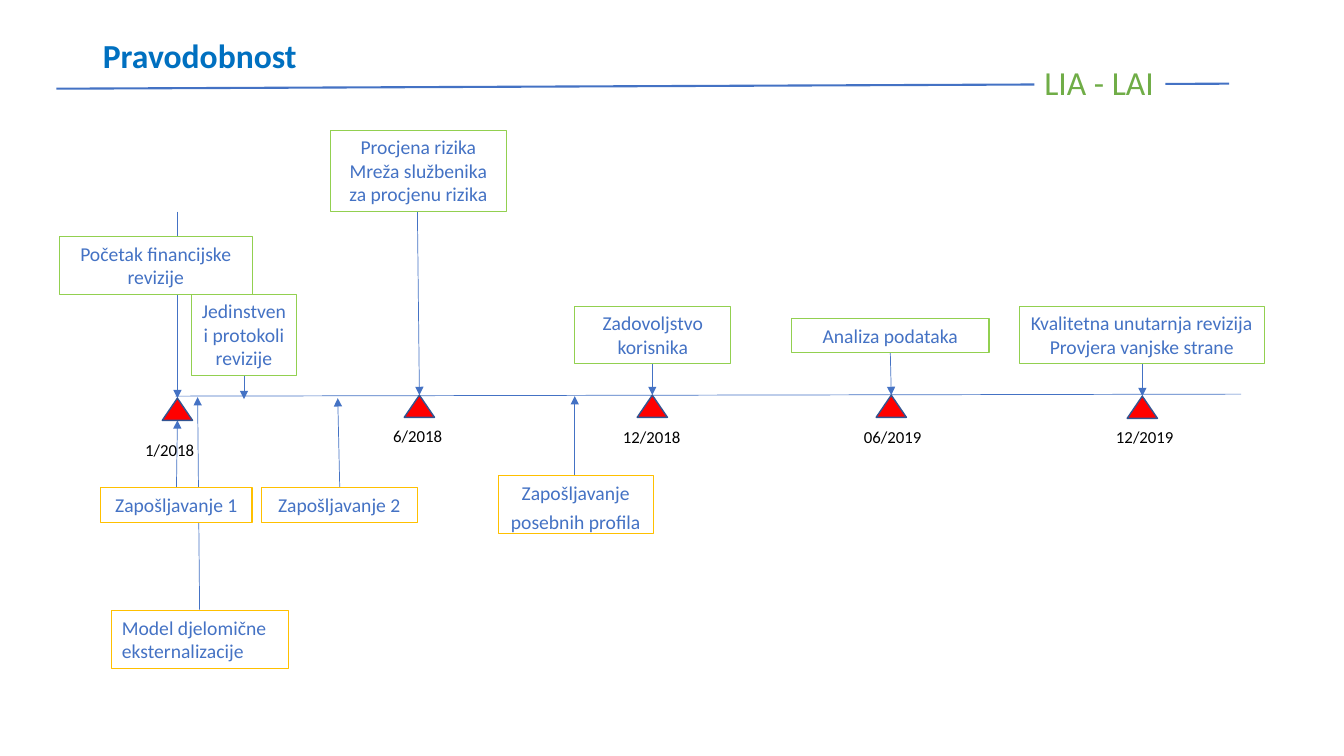
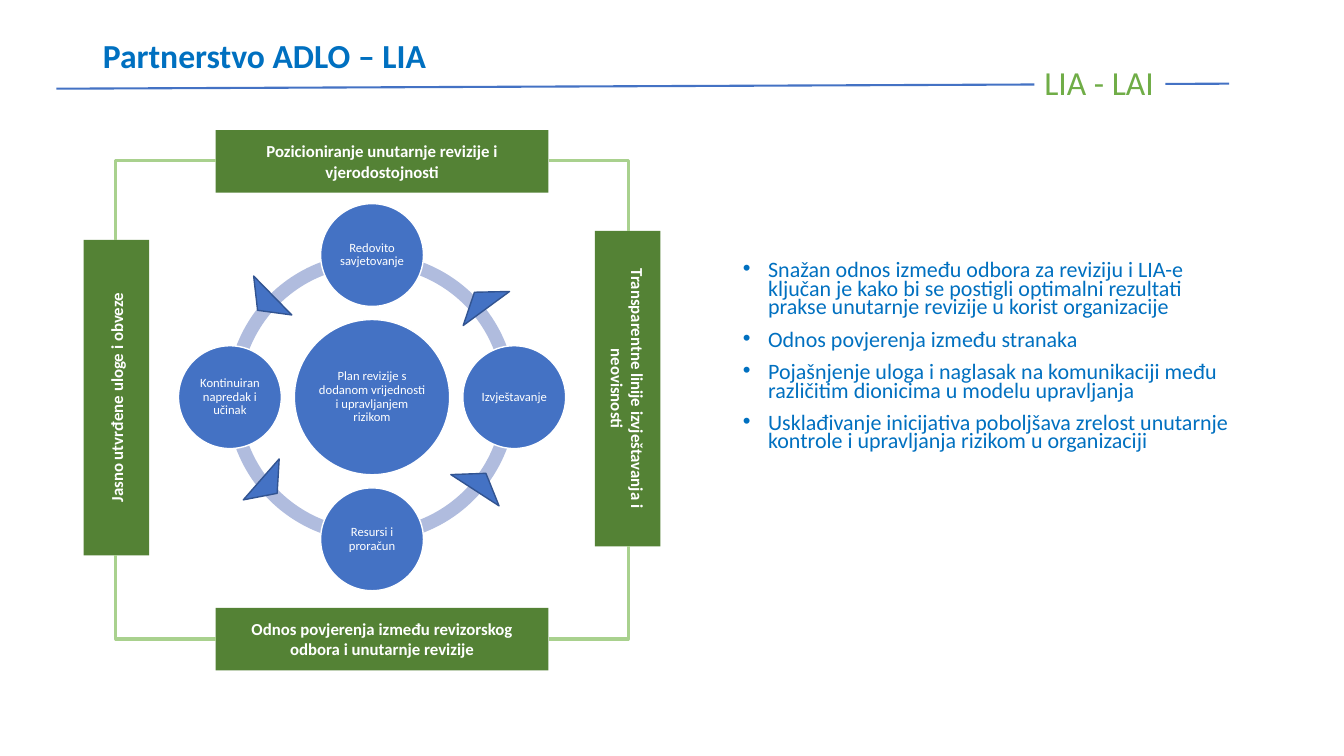
"""Build two slides on the audit timeline and the audit partnership."""
import dataclasses
import typing

import lxml.etree
import pptx
import pptx.dml.color
import pptx.enum.shapes
import pptx.enum.text
import pptx.oxml.ns
import pptx.util

Inches = pptx.util.Inches
Pt = pptx.util.Pt
Form = pptx.enum.shapes.MSO_SHAPE
Link = pptx.enum.shapes.MSO_CONNECTOR
Align = pptx.enum.text.PP_ALIGN
Anchor = pptx.enum.text.MSO_ANCHOR
qn = pptx.oxml.ns.qn

HUES = {
    "blue": "4472C4", "navy": "325491", "title": "0070C0", "brand": "70AD47",
    "lime": "92D050", "gold": "FFC000", "red": "FF0000", "ring": "B0BCDE",
    "green": "548235", "leaf": "A9D18E", "white": "FFFFFF", "black": "000000",
}


@dataclasses.dataclass
class Style:
    size: float
    hue: str
    bold: bool = False
    align: typing.Any = Align.CENTER
    anchor: typing.Any = Anchor.TOP
    wrap: bool = True
    pad: tuple[float, float] = (0.1, 0.05)
    lead: float = 1.0
    gap: float = 0


@dataclasses.dataclass
class Box:
    at: tuple[float, float, float, float]
    lines: list[str]
    hue: str = "lime"
    gap: float = 0
    align: typing.Any = Align.CENTER


@dataclasses.dataclass
class Mark:
    x: float
    y: float
    date: str
    left: float
    top: float


@dataclasses.dataclass
class Panel:
    at: tuple[float, float, float, float]
    text: str
    turn: float = 0


HEAD = Style(24, "title", True, Align.LEFT, Anchor.MIDDLE, lead=0.9)
BRAND = Style(24, "brand", align=Align.LEFT, wrap=False)
DATE = Style(12, "black", align=Align.LEFT, wrap=False)
BALL = Style(9, "white", anchor=Anchor.MIDDLE, pad=(0.01, 0.01), lead=0.9)
PANEL = Style(12, "white", True, anchor=Anchor.MIDDLE)
POINT = Style(15.7, "title", align=Align.LEFT, lead=0.7, gap=10)

MARKS = [
    Mark(1.76, 3.95, "1/2018", 1.34, 4.31),
    Mark(4.16, 3.92, "6/2018", 3.8, 4.17),
    Mark(6.47, 3.92, "12/2018", 6.08, 4.18),
    Mark(8.84, 3.92, "06/2019", 8.47, 4.18),
    Mark(11.33, 3.93, "12/2019", 10.97, 4.18),
]
ARROWS = [
    (1.98, 6.06, 1.96, 3.94), (1.76, 2.1, 1.76, 3.95), (4.14, 2.1, 4.16, 3.92),
    (2.42, 3.73, 2.42, 3.96), (1.75, 4.84, 1.76, 4.17), (5.7, 4.72, 5.7, 3.93),
    (3.37, 4.84, 3.35, 3.95), (8.83, 3.49, 8.84, 3.92),
    (11.33, 3.61, 11.33, 3.93), (6.47, 3.61, 6.47, 3.92),
]
BOXES = [
    Box((10.11, 3.04, 2.43, 0.57),
        ["Kvalitetna unutarnja revizija", "Provjera vanjske strane"]),
    Box((3.28, 1.29, 1.74, 0.81),
        ["Procjena rizika", "Mreža službenika za procjenu rizika"]),
    Box((7.85, 3.16, 1.96, 0.34), ["Analiza podataka"]),
    Box((4.94, 4.72, 1.54, 0.57), ["Zapošljavanje", "posebnih profila"], "gold", 4),
    Box((1.11, 6.06, 1.75, 0.57), ["Model djelomične eksternalizacije"], "gold",
        align=Align.LEFT),
    Box((1.9, 2.92, 1.04, 0.81), ["Jedinstveni protokoli", "revizije"]),
    Box((2.59, 4.84, 1.55, 0.34), ["Zapošljavanje 2"], "gold"),
    Box((1, 4.84, 1.5, 0.34), ["Zapošljavanje 1"], "gold"),
    Box((5.7, 3.04, 1.55, 0.57), ["Zadovoljstvo korisnika"]),
    Box((0.59, 2.35, 1.91, 0.57), ["Početak financijske revizije"]),
]
HUB = (3.69, 3.94)
BALLS = [
    (0, 0, 0.77, "Plan revizije s dodanom vrijednosti i upravljanjem rizikom"),
    (0, -1, 0.51, "Redovito savjetovanje"),
    (1, 0, 0.51, "Izvještavanje"),
    (0, 1, 0.51, "Resursi i proračun"),
    (-1, 0, 0.51, "Kontinuiran napredak i učinak"),
]
TIPS = [
    ((4.48, 2.88, 0.57, 0.2), 323.7), ((4.48, 4.68, 0.57, 0.2), 33),
    ((2.4, 4.72, 0.54, 0.21), 131.2), ((2.36, 2.9, 0.54, 0.21), 225.6),
]
PANELS = [
    Panel((2.14, 6.03, 3.3, 0.62),
          "Odnos povjerenja između revizorskog odbora i unutarnje revizije"),
    Panel((-0.41, 3.62, 3.13, 0.65), "Jasno utvrđene uloge i obveze", 270),
    Panel((2.14, 1.29, 3.3, 0.62),
          "Pozicioniranje unutarnje revizije i vjerodostojnosti"),
    Panel((4.66, 3.53, 3.13, 0.65),
          "Transparentne linije izvještavanja i neovisnosti", 90),
]
BENDS = [
    (2.14, 1.59, 1.15, 2.38), (2.14, 6.34, 1.15, 5.51),
    (5.44, 6.34, 6.23, 5.42), (5.44, 1.59, 6.23, 2.29),
]
POINTS = [
    "Snažan odnos između odbora za reviziju i LIA-e ključan je kako bi se postigli "
    "optimalni rezultati prakse unutarnje revizije u korist organizacije",
    "Odnos povjerenja između stranaka",
    "Pojašnjenje uloga i naglasak na komunikaciji među različitim dionicima "
    "u modelu upravljanja",
    "Usklađivanje inicijativa poboljšava zrelost unutarnje kontrole i upravljanja "
    "rizikom u organizaciji",
]


def tint(hue: str) -> pptx.dml.color.RGBColor:
    return pptx.dml.color.RGBColor.from_string(HUES[hue])


def apply(thing: typing.Any, form: dict[str, typing.Any]) -> None:
    for name, value in form.items():
        setattr(thing, name, value)


def write(shape: typing.Any, lines: list[str], style: Style) -> None:
    frame = shape.text_frame
    side, edge = (Inches(pad) for pad in style.pad)
    apply(frame, {
        "text": "\n".join(lines), "word_wrap": style.wrap,
        "auto_size": pptx.enum.text.MSO_AUTO_SIZE.NONE,
        "vertical_anchor": style.anchor, "margin_left": side,
        "margin_right": side, "margin_top": edge, "margin_bottom": edge,
    })
    for rank, para in enumerate(frame.paragraphs):
        before = style.gap if rank else 0
        apply(para, {"alignment": style.align, "line_spacing": style.lead,
                     "space_before": Pt(before)})
        for run in para.runs:
            apply(run.font, {"name": "Calibri", "size": Pt(style.size),
                             "bold": style.bold})
            run.font.color.rgb = tint(style.hue)


def place(slide: typing.Any, kind: typing.Any, at: tuple, fill: str,
          line: str = "", width: float = 1, turn: float = 0) -> typing.Any:
    shape = slide.shapes.add_shape(kind, *map(Inches, at))
    shape.shadow.inherit = False
    shape.rotation = turn
    shape.fill.solid()
    shape.fill.fore_color.rgb = tint(fill)
    if line:
        shape.line.color.rgb = tint(line)
        shape.line.width = Pt(width)
    else:
        shape.line.fill.background()
    return shape


def label(slide: typing.Any, at: tuple, lines: list[str],
          style: Style) -> typing.Any:
    shape = slide.shapes.add_textbox(*map(Inches, at))
    write(shape, lines, style)
    return shape


def join(slide: typing.Any, ends: tuple, hue: str, width: float,
         tip: bool = False, bent: bool = False) -> None:
    kind = Link.ELBOW if bent else Link.STRAIGHT
    link = slide.shapes.add_connector(kind, *map(Inches, ends))
    link.line.color.rgb = tint(hue)
    link.line.width = Pt(width)
    props = link._element.spPr
    if tip:
        lxml.etree.SubElement(props.find(qn("a:ln")), qn("a:tailEnd"),
                              type="triangle")
    if bent:
        props.find(qn("a:prstGeom")).set("prst", "bentConnector2")
    lxml.etree.SubElement(props, qn("a:effectLst"))


def start(deck: typing.Any, title: str) -> typing.Any:
    slide = deck.slides.add_slide(deck.slide_layouts[5])
    head = slide.shapes.title
    apply(head, {"left": Inches(0.92), "top": Inches(0.4),
                 "width": Inches(11.5), "height": Inches(0.35)})
    write(head, [title], HEAD)
    join(slide, (0.56, 0.88, 12.19, 0.83), "blue", 1.5)
    brand = place(slide, Form.RECTANGLE, (10.26, 0.57, 1.3, 0.5), "white")
    write(brand, ["LIA - LAI"], BRAND)
    return slide


def timeline(deck: typing.Any) -> None:
    slide = start(deck, "Pravodobnost")
    join(slide, (1.74, 3.93, 12.31, 3.91), "blue", 0.5)
    for ends in ARROWS:
        join(slide, ends, "blue", 0.5, tip=True)
    for mark in MARKS:
        place(slide, Form.ISOSCELES_TRIANGLE,
              (mark.x - 0.15, mark.y, 0.3, 0.22), "red", "navy")
        label(slide, (mark.left, mark.top, 0.78, 0.3), [mark.date], DATE)
    for box in BOXES:
        shape = place(slide, Form.RECTANGLE, box.at, "white", box.hue, 0.75)
        write(shape, box.lines, Style(14, "blue", align=box.align, gap=box.gap))


def partners(deck: typing.Any) -> None:
    slide = start(deck, "Partnerstvo ADLO – LIA")
    x, y = HUB
    for step in range(4):
        arc = place(slide, Form.BLOCK_ARC, (x - 1.44, y - 1.43, 2.87, 2.87), "ring")
        turns = (step * 54, (step + 1) % 4 * 54, 0.046)
        for rank, value in enumerate(turns):
            arc.adjustments[rank] = value
    for across, down, half, text in BALLS:
        at = (x + across * 1.41 - half, y + down * 1.41 - half, 2 * half, 2 * half)
        write(place(slide, Form.OVAL, at, "blue", "white"), [text], BALL)
    for at, turn in TIPS:
        place(slide, Form.ISOSCELES_TRIANGLE, at, "blue", "navy", turn=turn)
    for panel in PANELS:
        shape = place(slide, Form.RECTANGLE, panel.at, "green", turn=panel.turn)
        write(shape, [panel.text], PANEL)
    for ends in BENDS:
        join(slide, ends, "leaf", 2.25, bent=True)
    body = label(slide, (7.27, 2.56, 5.09, 3.58), POINTS, POINT)
    for para in body.text_frame.paragraphs:
        props = para._p.get_or_add_pPr()
        props.set("marL", str(Inches(0.25)))
        props.set("indent", str(Inches(-0.25)))
        lxml.etree.SubElement(props, qn("a:buFont"), typeface="Arial")
        lxml.etree.SubElement(props, qn("a:buChar"), char="•")


def main() -> None:
    deck = pptx.Presentation()
    apply(deck, {"slide_width": Inches(13.33), "slide_height": Inches(7.5)})
    timeline(deck)
    partners(deck)
    deck.save("out.pptx")


if __name__ == "__main__":
    main()
